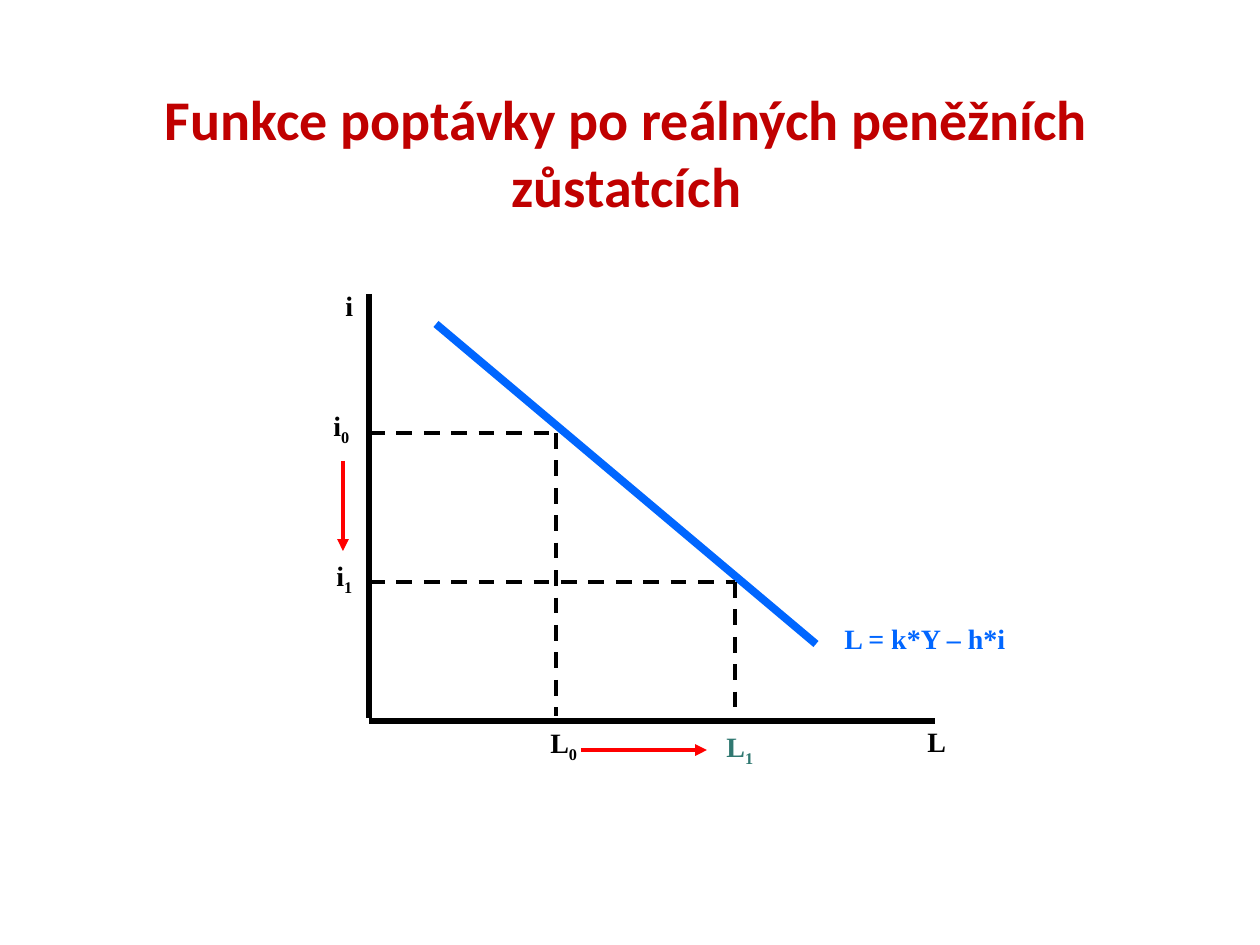
from lxml.etree import SubElement
from pptx import Presentation
from pptx.dml.color import RGBColor
from pptx.enum.dml import MSO_LINE
from pptx.enum.shapes import MSO_CONNECTOR
from pptx.enum.text import MSO_ANCHOR, MSO_AUTO_SIZE, PP_ALIGN
from pptx.oxml.ns import qn
from pptx.util import Pt

PX = 914400 / 126
COLORS = {
    "title": "C00000",
    "axis": "000000",
    "demand": "0066FF",
    "shift": "FF0000",
    "new": "307871",
}
LABEL_HEIGHT = 47

# Key positions of the graph
AXIS_X, AXIS_TOP, AXIS_BOTTOM = 369, 294, 718
BASE_Y, BASE_END = 721, 935
GUIDE_BOTTOM = 716
EQUILIBRIA = [(556, 433), (735, 582)]


def px(value):
    return round(value * PX)


def style_font(paragraph, name, size, color):
    font = paragraph.font
    font.name, font.size, font.bold = name, Pt(size), True
    font.color.rgb = RGBColor.from_string(COLORS[color])


def set_title(slide, text):
    title = slide.shapes.title
    title.left, title.top, title.width, title.height = map(px, (81, 78, 1091, 71))
    frame = title.text_frame
    frame.text = text
    frame.word_wrap = True
    frame.auto_size = MSO_AUTO_SIZE.NONE
    frame.vertical_anchor = MSO_ANCHOR.TOP
    heading = frame.paragraphs[0]
    heading.alignment = PP_ALIGN.CENTER
    style_font(heading, "Calibri", 32, "title")


def add_line(slide, start, end, color, width, dashed=False, arrow=False):
    line = slide.shapes.add_connector(
        MSO_CONNECTOR.STRAIGHT, *map(px, (*start, *end)))
    line.line.color.rgb = RGBColor.from_string(COLORS[color])
    line.line.width = Pt(width)
    if dashed:
        line.line.dash_style = MSO_LINE.DASH
    if arrow:
        SubElement(line.line._get_or_add_ln(), qn("a:tailEnd"), type="triangle")
    SubElement(line._element.spPr, qn("a:effectLst"))


def add_label(slide, left, top, width, text, subscript="", color="axis"):
    label = slide.shapes.add_textbox(*map(px, (left, top, width, LABEL_HEIGHT)))
    frame = label.text_frame
    frame.word_wrap = True
    frame.auto_size = MSO_AUTO_SIZE.SHAPE_TO_FIT_TEXT
    paragraph = frame.paragraphs[0]
    style_font(paragraph, "Times New Roman", 16, color)
    paragraph.add_run().text = text
    if subscript:
        index = paragraph.add_run()
        index.text = subscript
        index.font._element.set("baseline", "-25000")


def main():
    prs = Presentation()
    prs.slide_width, prs.slide_height = px(1260), px(945)
    slide = prs.slides.add_slide(prs.slide_layouts[5])
    set_title(slide, "Funkce poptávky po reálných peněžních zůstatcích")

    # Axes
    add_line(slide, (AXIS_X, AXIS_TOP), (AXIS_X, AXIS_BOTTOM), "axis", 3)
    add_line(slide, (AXIS_X, BASE_Y), (BASE_END, BASE_Y), "axis", 3)
    add_label(slide, 915, 718, 82, "L")
    add_label(slide, 333, 282, 30, "i")

    # Money demand curve
    add_line(slide, (436, 324), (816, 644), "demand", 4.5)
    add_label(slide, 832, 615, 226, "L = k*Y – h*i", color="demand")

    # Dashed guides from each point to both axes
    for x, y in EQUILIBRIA:
        add_line(slide, (AXIS_X, y), (x, y), "axis", 2.25, dashed=True)
        add_line(slide, (x, y), (x, GUIDE_BOTTOM), "axis", 2.25, dashed=True)

    # Levels on the axes
    add_label(slide, 321, 402, 82, "i", "0")
    add_label(slide, 324, 552, 67, "i", "1")
    add_label(slide, 714, 723, 68, "L", "1", "new")
    add_label(slide, 538, 719, 252, "L", "0")

    # Direction of change
    add_line(slide, (343, 461), (343, 551), "shift", 2.25, arrow=True)
    add_line(slide, (581, 750), (707, 750), "shift", 2.25, arrow=True)

    prs.save("out.pptx")


if __name__ == "__main__":
    main()
